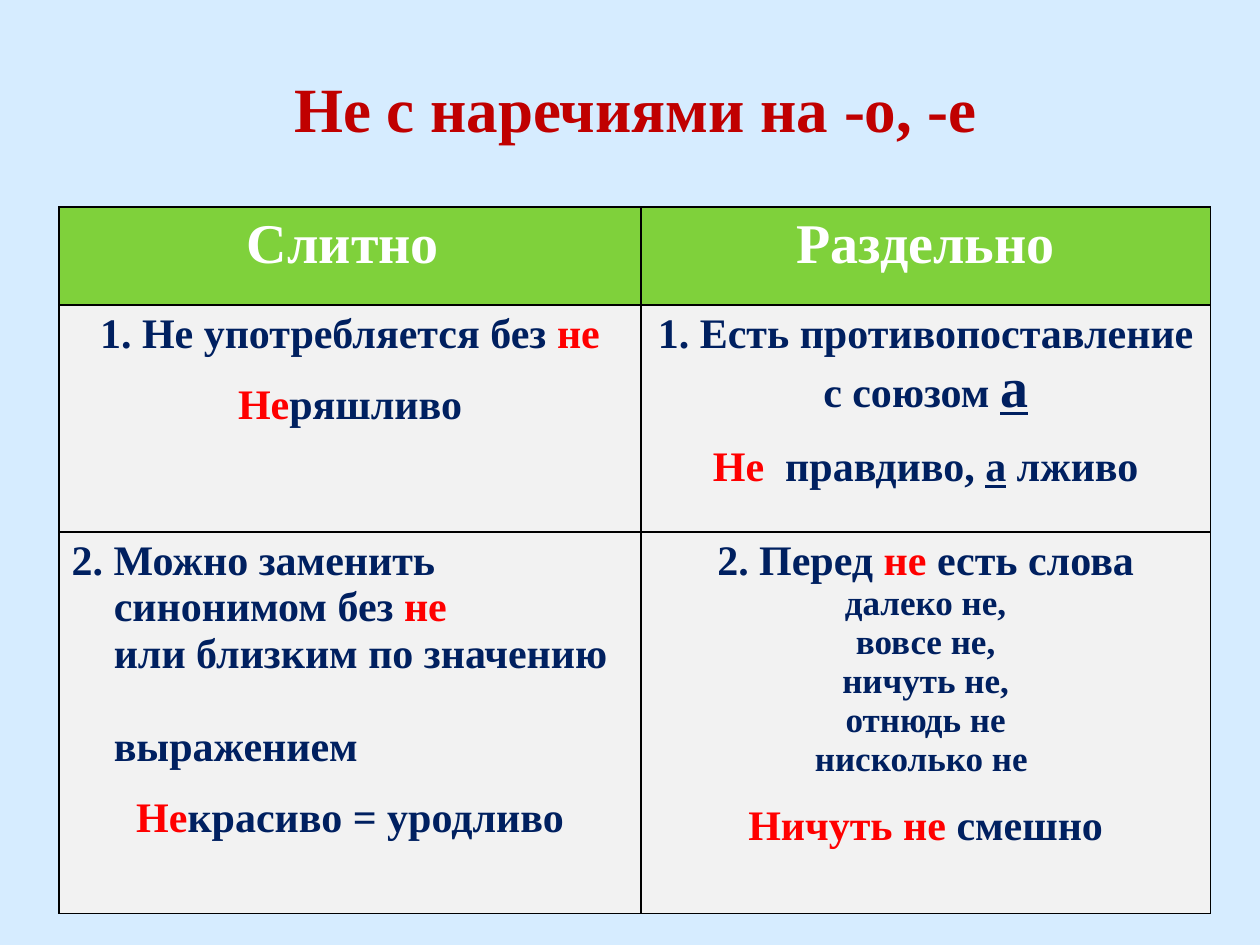
from dataclasses import dataclass

from lxml import etree
from pptx import Presentation
from pptx.dml.color import RGBColor
from pptx.enum.text import MSO_ANCHOR, PP_ALIGN
from pptx.oxml.ns import qn
from pptx.util import Cm, Pt

CENTER, LEFT = PP_ALIGN.CENTER, PP_ALIGN.LEFT
MIDDLE = MSO_ANCHOR.MIDDLE
COLORS = {
    "sky": "D6ECFF",
    "crimson": "C00000",
    "white": "FFFFFF",
    "green": "7FD13B",
    "navy": "002060",
    "red": "FF0000",
    "gray": "F2F2F2",
    "black": "000000",
}
GAP = 14


def rgb(color):
    return RGBColor.from_string(COLORS[color])


@dataclass
class Piece:
    text: str
    color: str | None = None
    size: int | None = None
    underline: bool | None = None


@dataclass
class Line:
    pieces: list
    size: int = 24
    color: str = "navy"
    align: PP_ALIGN = CENTER
    before: float = 0
    indent: float = 0


class Lesson:
    font = "Times New Roman"

    def __init__(self, slide):
        self.slide = slide

    def background(self, color):
        fill = self.slide.background.fill
        fill.solid()
        fill.fore_color.rgb = rgb(color)

    def add_lines(self, frame, lines):
        for index, line in enumerate(lines):
            paragraph = frame.add_paragraph() if index else frame.paragraphs[0]
            paragraph.alignment = line.align
            paragraph.space_before = Pt(line.before)
            if line.indent:
                paragraph._p.get_or_add_pPr().set("marL", str(Cm(line.indent)))
            font = paragraph.font
            font.name, font.size, font.bold = self.font, Pt(line.size), True
            font.color.rgb = rgb(line.color)
            for piece in line.pieces:
                run = paragraph.add_run()
                run.text = piece.text
                if piece.color:
                    run.font.color.rgb = rgb(piece.color)
                if piece.size:
                    run.font.size = Pt(piece.size)
                if piece.underline:
                    run.font.underline = True

    def heading(self, left, top, width, height, line):
        box = self.slide.shapes.add_textbox(Cm(left), Cm(top), Cm(width), Cm(height))
        box.text_frame.word_wrap = True
        box.text_frame.vertical_anchor = MIDDLE
        self.add_lines(box.text_frame, [line])

    def border(self, cell, color, width):
        properties = cell._tc.get_or_add_tcPr()
        for side in ("a:lnL", "a:lnR", "a:lnT", "a:lnB"):
            edge = etree.SubElement(properties, qn(side), w=str(Pt(width)))
            fill = etree.SubElement(edge, qn("a:solidFill"))
            etree.SubElement(fill, qn("a:srgbClr"), val=COLORS[color])

    def table(self, left, top, widths, heights, rows):
        table = self.slide.shapes.add_table(
            len(heights), len(widths), Cm(left), Cm(top), Cm(sum(widths)), Cm(sum(heights))
        ).table
        table.horz_banding = False
        for column, width in zip(table.columns, widths):
            column.width = Cm(width)
        for row, height in zip(table.rows, heights):
            row.height = Cm(height)
        for r, row in enumerate(rows):
            for c, lines in enumerate(row):
                cell = table.cell(r, c)
                self.border(cell, "black", 1)
                cell.fill.solid()
                cell.fill.fore_color.rgb = rgb("gray" if r else "green")
                self.add_lines(cell.text_frame, lines)


def main():
    presentation = Presentation()
    presentation.slide_width, presentation.slide_height = Cm(25.4), Cm(19.05)
    lesson = Lesson(presentation.slides.add_slide(presentation.slide_layouts[6]))
    lesson.background("sky")
    lesson.heading(
        2.18, 1.07, 21.59, 2.18,
        Line([Piece("Не с наречиями на -о, -е ")], 36, "crimson"),
    )

    header = [
        [Line([Piece(title)], 32, "white")] for title in ("Слитно ", "Раздельно")
    ]
    joined_always = [
        Line([Piece("1. Не употребляется без "), Piece("не", "red")]),
        Line([Piece("Не", "red"), Piece("ряшливо")], before=GAP),
    ]
    separate_contrast = [
        Line([
            Piece("1. Есть противопоставление с союзом "),
            Piece("а", size=32, underline=True),
        ]),
        Line([
            Piece("Не", "red"),
            Piece("  правдиво, "),
            Piece("а", underline=True),
            Piece(" лживо"),
        ], before=GAP),
    ]
    joined_synonym = [
        Line([Piece("2. Можно заменить")], align=LEFT),
        Line([Piece("синонимом без "), Piece("не", "red")], align=LEFT, indent=0.85),
        Line([Piece("или близким по значению")], align=LEFT, indent=0.85),
        Line([Piece("выражением")], align=LEFT, indent=0.85, before=26.5),
        Line([Piece("Не", "red"), Piece("красиво = уродливо")], before=GAP),
    ]
    negations = ("далеко не,", "вовсе не,", "ничуть не,", "отнюдь не", "нисколько не ")
    separate_negation = [
        Line([Piece("2. Перед "), Piece("не ", "red"), Piece("есть слова")]),
        *[Line([Piece(negation)], 20) for negation in negations],
        Line([Piece("Ничуть не ", "red"), Piece("смешно")], before=GAP),
    ]
    lesson.table(
        1.19, 4.17, (11.73, 11.48), (1.98, 4.57, 7.7),
        [
            header,
            [joined_always, separate_contrast],
            [joined_synonym, separate_negation],
        ],
    )
    presentation.save("out.pptx")


if __name__ == "__main__":
    main()
